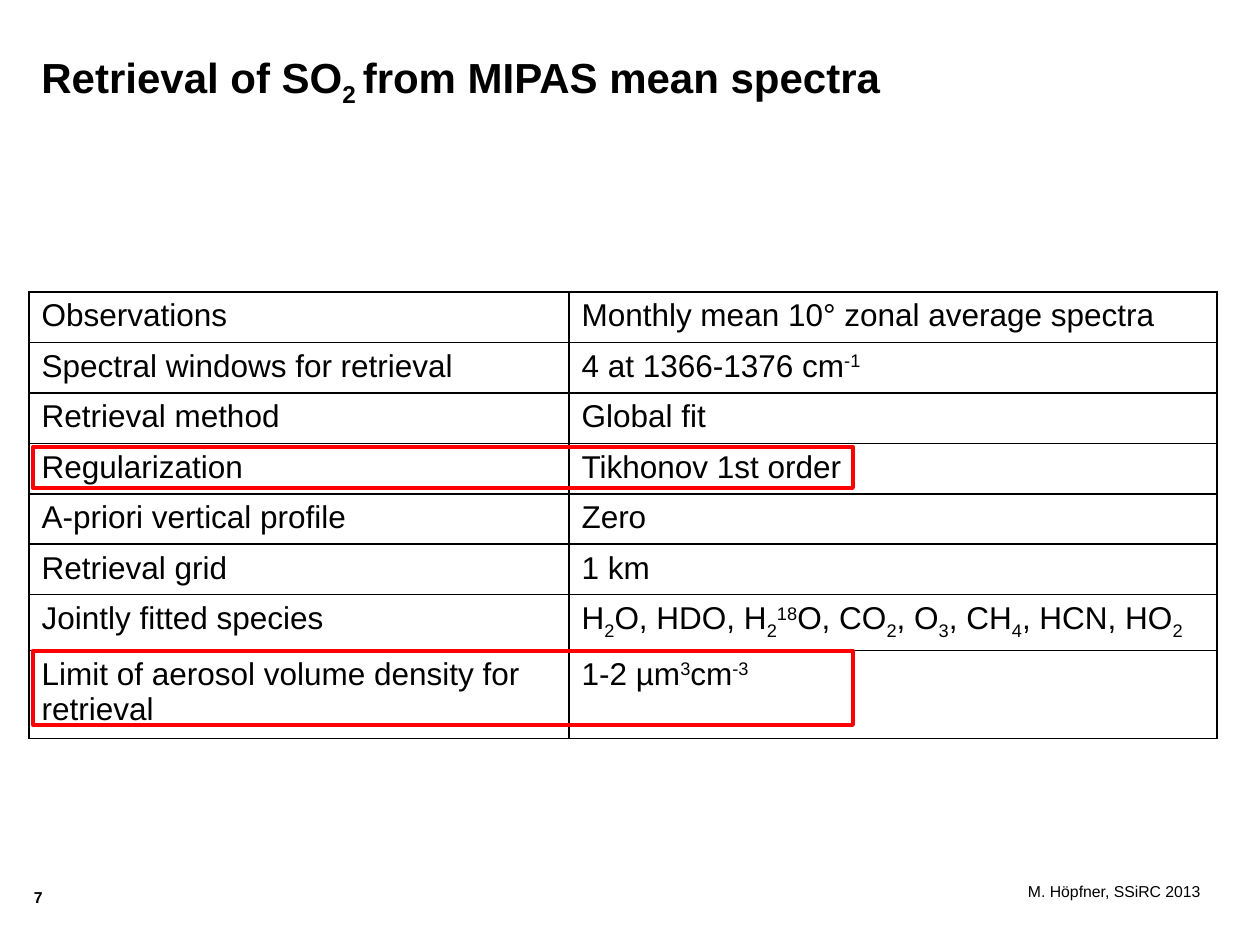
from lxml.etree import SubElement
from pptx import Presentation
from pptx.dml.color import RGBColor
from pptx.enum.shapes import MSO_SHAPE
from pptx.oxml import parse_xml
from pptx.oxml.ns import nsdecls, qn
from pptx.util import Emu, Pt

BLACK = RGBColor(0, 0, 0)
RED = RGBColor(255, 0, 0)
SHIFT = {"_": "-25000", "^": "30000"}


def px(n):
    return Emu(round(n * 914400 / 126))


def write(par, text, size, bold=False):
    # Runs are split by |; a leading _ lowers a run and ^ raises it
    for part in text.split("|"):
        run = par.add_run()
        run.text = part.lstrip("_^")
        font = run.font
        font.name = "Arial"
        font.size = Pt(size)
        font.bold = bold
        font.color.rgb = BLACK
        if part[0] in SHIFT:
            run._r.get_or_add_rPr().set("baseline", SHIFT[part[0]])


deck = Presentation()
deck.slide_width, deck.slide_height = px(1260), px(945)
slide = deck.slides.add_slide(deck.slide_layouts[6])
shapes = slide.shapes

# Page number, footer and title
for left, top, wide, high, pad, text, size, bold in [
    (34, 888, 45, 30, 0, "7", 9, True),
    (1028, 882, 219, 49, 0, "M. Höpfner, SSiRC 2013", 9, False),
    (29, 45, 1019, 63, 1, "Retrieval of SO|_2 |from MIPAS mean spectra", 24, True),
]:
    frame = shapes.add_textbox(px(left), px(top), px(wide), px(high)).text_frame
    frame.word_wrap = True
    if not pad:
        frame.margin_left = frame.margin_right = 0
        frame.margin_top = frame.margin_bottom = 0
    write(frame.paragraphs[0], text, size, bold)

# Table of retrieval settings
rows = [
    ("Observations", "Monthly mean 10° zonal average spectra"),
    ("Spectral windows for retrieval", "4 at 1366-1376 cm|^-1"),
    ("Retrieval method", "Global fit"),
    ("Regularization", "Tikhonov 1st order"),
    ("A-priori vertical profile", "Zero"),
    ("Retrieval grid", "1 km"),
    ("Jointly fitted species",
     "H|_2|O, HDO, H|_2|^18|O, CO|_2|, O|_3|, CH|_4|, HCN, HO|_2"),
    ("Limit of aerosol volume density for retrieval", "1-2 µm|^3|cm|^-3"),
]
table = shapes.add_table(len(rows), 2, px(29), px(292), px(1188), px(400)).table
table.first_row = table.horz_banding = False
for col, wide in zip(table.columns, (540, 648)):
    col.width = px(wide)
for r, row in enumerate(rows):
    table.rows[r].height = px(50)
    for c, text in enumerate(row):
        cell = table.cell(r, c)
        props = cell._tc.get_or_add_tcPr()
        for side in ("lnL", "lnR", "lnT", "lnB"):
            edge = parse_xml(f'<a:{side} {nsdecls("a")} w="{Pt(1)}"/>')
            fill = SubElement(edge, qn("a:solidFill"))
            SubElement(fill, qn("a:srgbClr")).set("val", str(BLACK))
            props.append(edge)
        cell.fill.background()
        write(cell.text_frame.paragraphs[0], text, 18)

# Red frames around the key rows
for top, high in ((447, 41), (651, 74)):
    box = shapes.add_shape(MSO_SHAPE.RECTANGLE, px(33), px(top), px(820), px(high))
    box.shadow.inherit = False
    box.fill.background()
    box.line.color.rgb = RED
    box.line.width = Pt(2.25)

deck.save("out.pptx")
